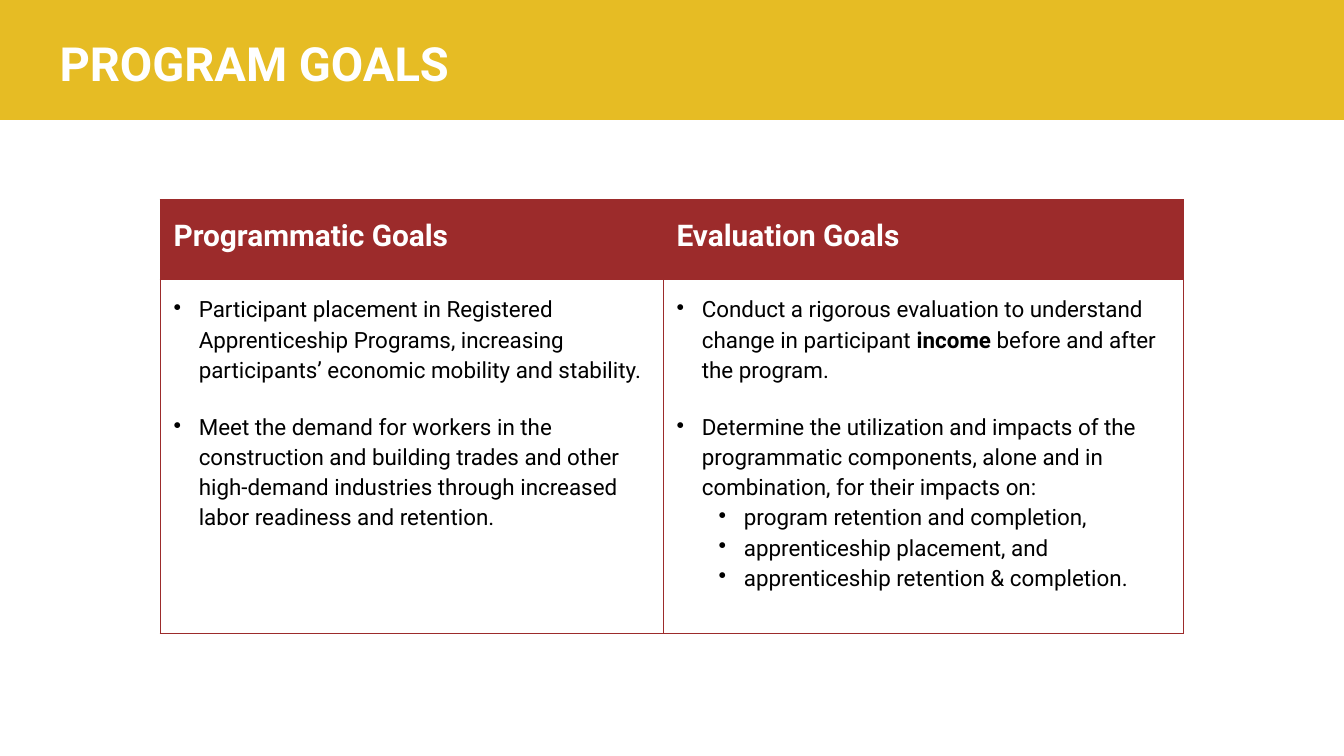
from lxml.etree import SubElement
from pptx import Presentation
from pptx.dml.color import RGBColor
from pptx.enum.shapes import MSO_SHAPE
from pptx.enum.text import MSO_ANCHOR
from pptx.oxml.ns import qn
from pptx.util import Pt

GOLD, RED, WHITE, BLACK = "E6BC24", "9C2B2B", "FFFFFF", "000000"
INSET = 7.2
HANGING = 13.5
GOALS = {
    "Programmatic Goals": [
        (["Participant placement in Registered Apprenticeship Programs, increasing "
          "participants’ economic mobility and stability."], 13.5, 14.5),
        (["Meet the demand for workers in the construction and building trades and other "
          "high-demand industries through increased labor readiness and retention."], 13.5, 0),
    ],
    "Evaluation Goals": [
        (["Conduct a rigorous evaluation to understand change in participant",
          " income ", "before and after the program."], 13.5, 14.5),
        (["Determine the utilization and impacts of the programmatic components, alone "
          "and in combination, for their impacts on:"], 13.5, 0),
        (["program retention and completion,"], 36, 0),
        (["apprenticeship placement, and"], 36, 0),
        (["apprenticeship retention & completion."], 36, 0),
    ],
}


def color(value):
    """Turn a hex string into a colour."""
    return RGBColor.from_string(value)


def style(para, size, value, bold=False):
    """Set the font of a whole paragraph."""
    font = para.font
    font.name, font.size, font.bold = "Roboto", Pt(size), bold
    font.color.rgb = color(value)


def set_insets(holder):
    """Give a cell or text frame equal margins."""
    holder.margin_left = holder.margin_right = Pt(INSET)
    holder.margin_top = holder.margin_bottom = Pt(INSET)


def add_banner(page, width):
    """Draw the gold band across the top."""
    band = page.shapes.add_shape(MSO_SHAPE.RECTANGLE, 0, 0, width, Pt(64.3))
    band.shadow.inherit = False
    band.fill.solid()
    band.fill.fore_color.rgb = color(GOLD)
    band.line.fill.background()


def add_title(page, text):
    """Write the slide title over the banner."""
    box = page.shapes.add_textbox(Pt(24.8), Pt(11.1), Pt(671), Pt(45.4))
    frame = box.text_frame
    frame.word_wrap = True
    frame.vertical_anchor = MSO_ANCHOR.MIDDLE
    set_insets(frame)
    para = frame.paragraphs[0]
    para.text = text
    style(para, 25.2, WHITE, True)


def add_borders(cell):
    """Outline a cell with thin red lines."""
    properties = cell._tc.get_or_add_tcPr()
    for side in ("lnL", "lnR", "lnT", "lnB"):
        line = SubElement(properties, qn(f"a:{side}"), w=str(Pt(0.75)))
        fill = SubElement(line, qn("a:solidFill"))
        SubElement(fill, qn("a:srgbClr"), val=RED)


def add_bullet(para, indent):
    """Give a paragraph a hanging bullet."""
    properties = para._p.get_or_add_pPr()
    properties.set("marL", str(Pt(indent)))
    properties.set("indent", str(-Pt(HANGING)))
    bullet_color = SubElement(properties, qn("a:buClr"))
    SubElement(bullet_color, qn("a:srgbClr"), val=BLACK)
    SubElement(properties, qn("a:buChar"), char="•")


def fill_header(cell, text):
    """Fill a heading cell."""
    set_insets(cell)
    add_borders(cell)
    cell.fill.solid()
    cell.fill.fore_color.rgb = color(RED)
    cell.text = text
    para = cell.text_frame.paragraphs[0]
    para.line_spacing = 1.15
    style(para, 16, WHITE, True)


def fill_goals(cell, goals):
    """Fill a body cell with bullets, the second span of each being bold."""
    set_insets(cell)
    add_borders(cell)
    cell.fill.background()
    frame = cell.text_frame
    for index, (texts, indent, gap) in enumerate(goals):
        para = frame.add_paragraph() if index else frame.paragraphs[0]
        para.line_spacing = 1.15
        para.space_after = Pt(gap)
        add_bullet(para, indent)
        style(para, 12, BLACK)
        for position, text in enumerate(texts):
            span = para.add_run()
            span.text = text
            span.font.bold = position == 1


def add_goals_table(page):
    """Place the two-column table of goals."""
    widths, heights = (269.5, 278.7), (42.8, 189.7)
    table = page.shapes.add_table(
        2, 2, Pt(85.8), Pt(107.1), Pt(sum(widths)), Pt(sum(heights))).table
    table.horz_banding = False
    for row, height in zip(table.rows, heights):
        row.height = Pt(height)
    for index, (heading, goals) in enumerate(GOALS.items()):
        table.columns[index].width = Pt(widths[index])
        fill_header(table.cell(0, index), heading)
        fill_goals(table.cell(1, index), goals)


def main():
    """Build and save the slide."""
    deck = Presentation()
    deck.slide_width, deck.slide_height = Pt(720), Pt(405)
    page = deck.slides.add_slide(deck.slide_layouts[6])
    add_banner(page, deck.slide_width)
    add_title(page, "PROGRAM GOALS")
    add_goals_table(page)
    deck.save("out.pptx")


if __name__ == "__main__":
    main()
